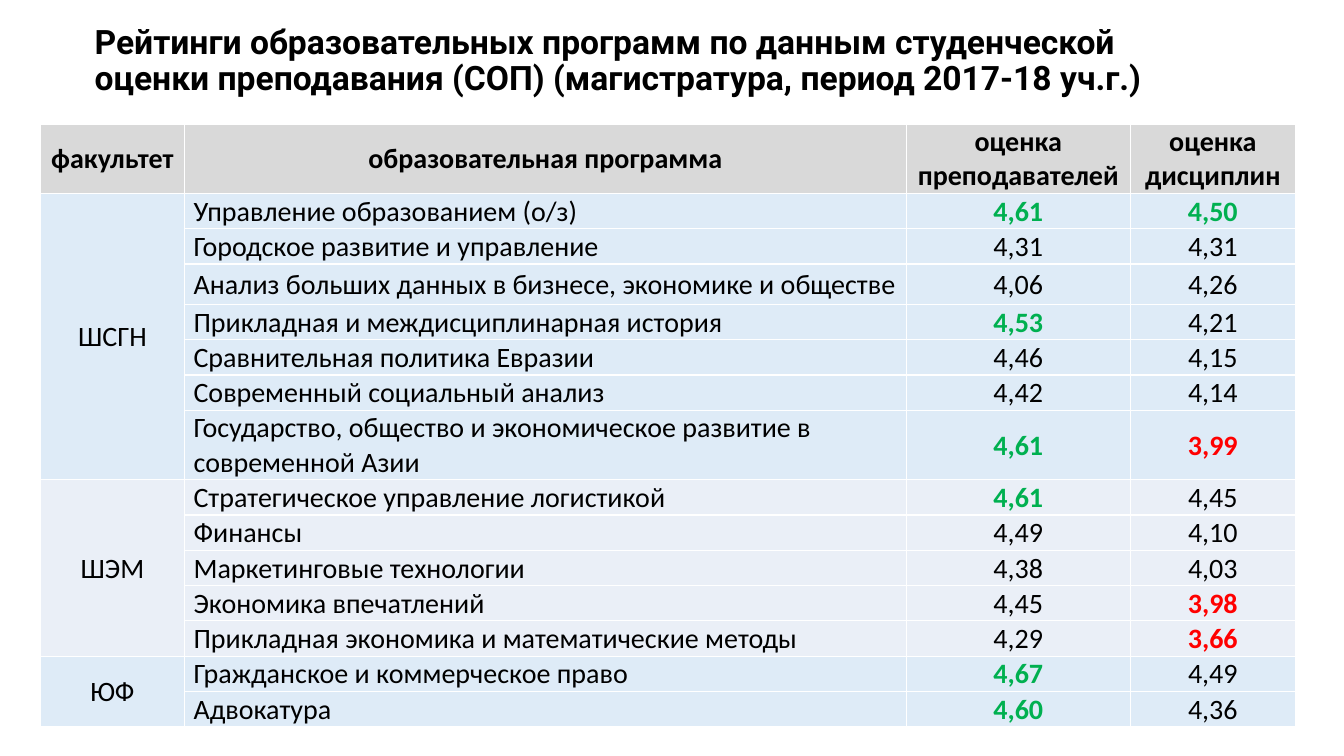
from lxml import etree
from pptx import Presentation
from pptx.dml.color import RGBColor
from pptx.enum import text
from pptx.oxml import ns
from pptx.util import Inches, Pt

# Content
TITLE = ("Рейтинги образовательных программ по данным студенческой "
         "оценки преподавания (СОП) (магистратура, период 2017-18 уч.г.)")
HEADERS = ["факультет", "образовательная программа",
           "оценка преподавателей", "оценка дисциплин"]
FACULTIES = [
    ("ШСГН", [
        ("Управление образованием (о/з)", "4,61", "4,50"),
        ("Городское развитие и управление", "4,31", "4,31"),
        ("Анализ больших данных в бизнесе, экономике и обществе", "4,06", "4,26"),
        ("Прикладная и междисциплинарная история", "4,53", "4,21"),
        ("Сравнительная политика Евразии", "4,46", "4,15"),
        ("Современный социальный анализ", "4,42", "4,14"),
        ("Государство, общество и экономическое развитие в современной Азии",
         "4,61", "3,99"),
    ]),
    ("ШЭМ", [
        ("Стратегическое управление логистикой", "4,61", "4,45"),
        ("Финансы", "4,49", "4,10"),
        ("Маркетинговые технологии", "4,38", "4,03"),
        ("Экономика впечатлений", "4,45", "3,98"),
        ("Прикладная экономика и математические методы", "4,29", "3,66"),
    ]),
    ("ЮФ", [
        ("Гражданское и коммерческое право", "4,67", "4,49"),
        ("Адвокатура", "4,60", "4,36"),
    ]),
]
HIGH, LOW = 4.5, 4.0  # scores from HIGH are green, below LOW are red

# Layout and colours
COL_WIDTHS = [1.43, 7.16, 2.22, 1.64]
ROW_HEIGHT = 0.35
TALL_ROWS = {0: 0.69, 3: 0.4, 7: 0.69}
BLACK = RGBColor(0x00, 0x00, 0x00)
WHITE = RGBColor(0xFF, 0xFF, 0xFF)
GREEN = RGBColor(0x00, 0xB0, 0x50)
RED = RGBColor(0xFF, 0x00, 0x00)
GREY = RGBColor(0xD9, 0xD9, 0xD9)
BANDS = [RGBColor(0xDE, 0xEB, 0xF7), RGBColor(0xEA, 0xEF, 0xF7)]
CENTER, LEFT = text.PP_ALIGN.CENTER, text.PP_ALIGN.LEFT


def write(tf, words, size=20, font="Calibri", color=BLACK, bold=False,
          align=LEFT, spacing=None):
    p = tf.paragraphs[0]
    p.alignment = align
    p.line_spacing = spacing
    r = p.add_run()
    r.text = words
    r.font.size, r.font.name, r.font.bold = Pt(size), font, bold
    r.font.color.rgb = color


def style_cell(cell, fill, left=0.01):
    cell.margin_left = Inches(left)
    cell.margin_right = cell.margin_top = Inches(0.01)
    cell.margin_bottom = 0
    cell.vertical_anchor = text.MSO_ANCHOR.MIDDLE
    props = cell._tc.get_or_add_tcPr()
    for side in ("a:lnL", "a:lnR", "a:lnT", "a:lnB"):
        line = etree.SubElement(props, ns.qn(side), w=str(Pt(1)))
        paint = etree.SubElement(line, ns.qn("a:solidFill"))
        etree.SubElement(paint, ns.qn("a:srgbClr"), val=str(WHITE))
    cell.fill.solid()
    cell.fill.fore_color.rgb = fill


def score_format(score):
    value = float(score.replace(",", "."))
    color = GREEN if value >= HIGH else RED if value < LOW else BLACK
    return {"color": color, "bold": color != BLACK}


prs = Presentation()
prs.slide_width, prs.slide_height = Inches(13.33), Inches(7.5)
s = prs.slides.add_slide(prs.slide_layouts[6])

# Title
tf = s.shapes.add_textbox(Inches(0.84), Inches(0.13),
                          Inches(11.5), Inches(0.97)).text_frame
tf.word_wrap = True
tf.vertical_anchor = text.MSO_ANCHOR.MIDDLE
write(tf, TITLE, size=24, font="Roboto", bold=True, spacing=0.9)

# Table grid
row_count = 1 + sum(len(programs) for _, programs in FACULTIES)
heights = [TALL_ROWS.get(i, ROW_HEIGHT) for i in range(row_count)]
table = s.shapes.add_table(row_count, len(HEADERS), Inches(0.4), Inches(1.23),
                           Inches(sum(COL_WIDTHS)), Inches(sum(heights))).table
table.first_row = table.horz_banding = False
for column, width in zip(table.columns, COL_WIDTHS):
    column.width = Inches(width)
for table_row, height in zip(table.rows, heights):
    table_row.height = Inches(height)

# Header row
for col, header in enumerate(HEADERS):
    cell = table.cell(0, col)
    style_cell(cell, GREY)
    write(cell.text_frame, header, bold=True, align=CENTER)

# Faculties and their programmes
row = 1
for index, (faculty, programs) in enumerate(FACULTIES):
    band = BANDS[index % 2]
    first = table.cell(row, 0)
    first.merge(table.cell(row + len(programs) - 1, 0))
    write(first.text_frame, faculty, align=CENTER)
    for program, *scores in programs:
        style_cell(table.cell(row, 0), band)
        style_cell(table.cell(row, 1), band, left=0.09)
        write(table.cell(row, 1).text_frame, program)
        for col, score in enumerate(scores, start=2):
            cell = table.cell(row, col)
            style_cell(cell, band)
            write(cell.text_frame, score, align=CENTER, **score_format(score))
        row += 1

prs.save("out.pptx")
